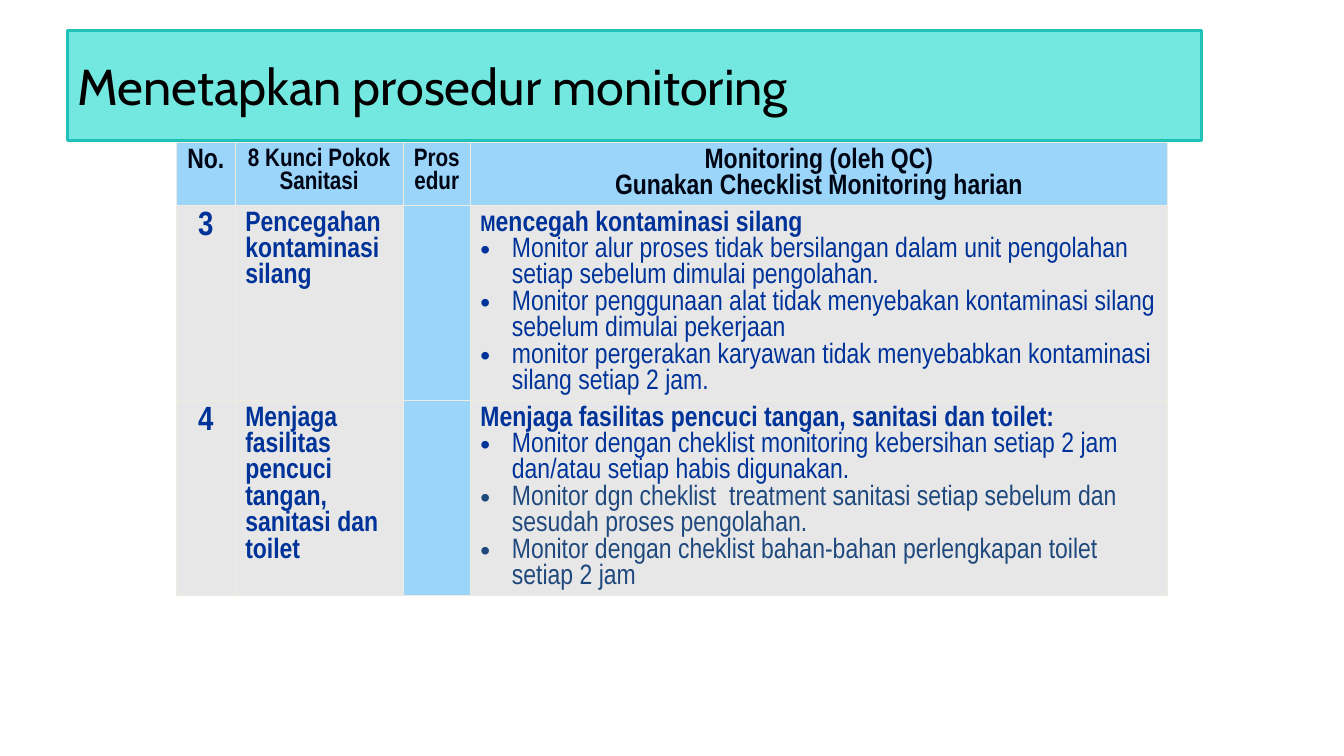
from pptx import Presentation
from pptx.dml.color import RGBColor
from pptx.enum.shapes import MSO_SHAPE
from pptx.enum.text import MSO_ANCHOR, PP_ALIGN
from pptx.oxml import parse_xml
from pptx.oxml.ns import nsdecls
from pptx.util import Pt

DIAG = MSO_SHAPE.ROUND_2_DIAG_RECTANGLE
MIDDLE = MSO_ANCHOR.MIDDLE
LEFT, CENTER = PP_ALIGN.LEFT, PP_ALIGN.CENTER

COLORS = {"aqua": "72E8E0", "teal": "20C2B6", "sky": "9BD5FA", "gray": "E7E7E7",
          "rule": "EEECE1", "black": "000000", "ink": "000514",
          "blue": "003399", "navy": "1F497D"}
TITLE = "Menetapkan prosedur monitoring"
HEADS = [
    (["No."], 20),
    (["8 Kunci Pokok Sanitasi"], 18),
    (["Prosedur"], 18),
    (["Monitoring (oleh QC)", "Gunakan Checklist Monitoring harian"], 20),
]
KEYS = [
    {"no": "3", "key": "Pencegahan kontaminasi silang",
     "lead": [("M", 16), ("encegah kontaminasi silang", 20)],
     "items": [
         ("Monitor alur proses tidak bersilangan dalam unit pengolahan "
          "setiap sebelum dimulai pengolahan.", "blue"),
         ("Monitor penggunaan alat tidak menyebakan kontaminasi silang "
          "sebelum dimulai pekerjaan", "blue"),
         ("monitor pergerakan karyawan tidak menyebabkan kontaminasi "
          "silang setiap 2 jam.", "blue")]},
    {"no": "4", "key": "Menjaga fasilitas pencuci tangan, sanitasi dan toilet",
     "lead": [("Menjaga fasilitas pencuci tangan, sanitasi dan toilet:", 20)],
     "items": [
         ("Monitor dengan cheklist monitoring kebersihan setiap 2 jam "
          "dan/atau setiap habis digunakan.", "blue"),
         ("Monitor dgn cheklist  treatment sanitasi setiap sebelum dan "
          "sesudah proses pengolahan.", "navy"),
         ("Monitor dengan cheklist bahan-bahan perlengkapan toilet "
          "setiap 2 jam", "navy")]},
]
WIDTHS = [42, 120, 48, 498]
HEIGHTS = [44, 139, 139]
SIDES = ("lnL", "lnR", "lnT", "lnB")


def tint(name):
    """Return the named colour."""
    return RGBColor.from_string(COLORS[name])


def write(para, runs, color, bold=True, font="Arial Narrow", align=LEFT):
    """Add runs of text and size to a paragraph."""
    para.alignment = align
    for text, size in runs:
        run = para.add_run()
        run.text = text
        look = {"name": font, "size": Pt(size), "bold": bold}
        for key, value in look.items():
            setattr(run.font, key, value)
        run.font.color.rgb = tint(color)


def bullet(para):
    """Give a paragraph a hanging bullet."""
    props = para._p.get_or_add_pPr()
    props.set("marL", str(Pt(22.5)))
    props.set("indent", str(-Pt(22.5)))
    for xml in ('<a:buFont %s typeface="Arial"/>', '<a:buChar %s char="•"/>'):
        props.append(parse_xml(xml % nsdecls("a")))


def paint(cell, fill):
    """Set the borders and fill of a cell."""
    props = cell._tc.get_or_add_tcPr()
    for side in SIDES:
        props.append(parse_xml(
            f'<a:{side} {nsdecls("a")} w="{Pt(1)}"><a:solidFill>'
            f'<a:srgbClr val="{COLORS["rule"]}"/></a:solidFill></a:{side}>'))
    cell.fill.solid()
    cell.fill.fore_color.rgb = tint(fill)


def add_title(slide):
    """Draw the title bar."""
    bar = slide.shapes.add_shape(DIAG, Pt(48.2), Pt(21.6), Pt(810), Pt(78.5))
    bar.adjustments[0] = 0
    bar.shadow.inherit = False
    bar.fill.solid()
    bar.fill.fore_color.rgb = tint("aqua")
    bar.line.color.rgb = tint("teal")
    bar.line.width = Pt(2)
    frame = bar.text_frame
    frame.word_wrap = True
    frame.vertical_anchor = MIDDLE
    write(frame.paragraphs[0], [(TITLE, 36)], "black", False, "Cabin")


def add_grid(slide):
    """Build the monitoring table."""
    grid = slide.shapes.add_table(
        len(HEIGHTS), len(WIDTHS), Pt(126), Pt(102),
        Pt(sum(WIDTHS)), Pt(sum(HEIGHTS))).table
    for col, width in zip(grid.columns, WIDTHS):
        col.width = Pt(width)
    for row, height in zip(grid.rows, HEIGHTS):
        row.height = Pt(height)
    for r in range(len(HEIGHTS)):
        for c in range(len(WIDTHS)):
            paint(grid.cell(r, c), "sky" if r == 0 or c == 2 else "gray")
    for c, (lines, size) in enumerate(HEADS):
        frame = grid.cell(0, c).text_frame
        for i, line in enumerate(lines):
            para = frame.add_paragraph() if i else frame.paragraphs[0]
            write(para, [(line, size)], "ink", align=CENTER)
    for r, row in enumerate(KEYS, 1):
        num, key, task = (grid.cell(r, c).text_frame for c in (0, 1, 3))
        write(num.paragraphs[0], [(row["no"], 24)], "blue", align=CENTER)
        write(key.paragraphs[0], [(row["key"], 20)], "blue")
        write(task.paragraphs[0], row["lead"], "blue")
        for text, color in row["items"]:
            para = task.add_paragraph()
            bullet(para)
            write(para, [(text, 20)], color, False)


def main():
    """Build and save the slide."""
    deck = Presentation()
    deck.slide_width, deck.slide_height = Pt(960), Pt(540)
    slide = deck.slides.add_slide(deck.slide_layouts[6])
    add_title(slide)
    add_grid(slide)
    deck.save("out.pptx")


if __name__ == "__main__":
    main()
